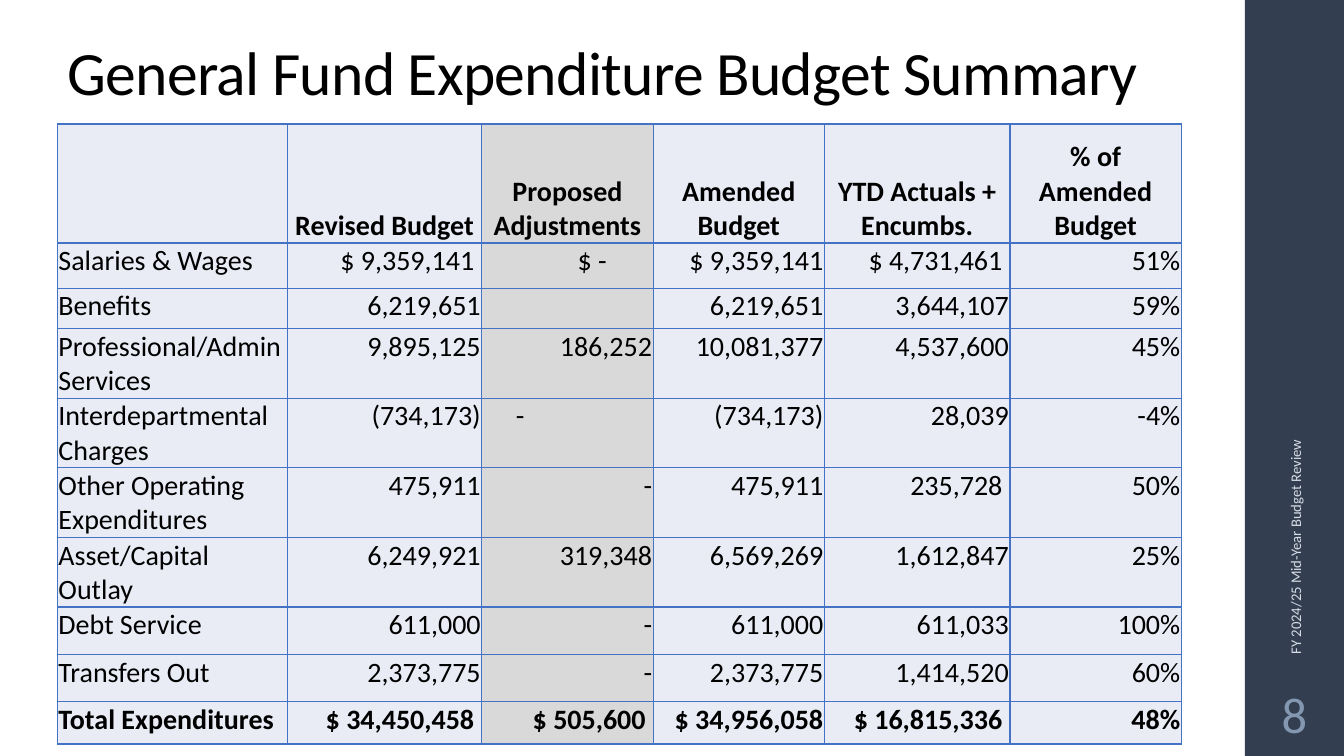
from dataclasses import dataclass

import lxml.etree
import pptx
import pptx.dml.color
import pptx.enum.shapes
import pptx.enum.text
import pptx.oxml.ns
import pptx.util

COLORS = {
    "sidebar": "333F50",
    "footer": "D6DCE5",
    "page": "8497B0",
    "ink": "000000",
    "cell": "E9EBF5",
    "adjustment": "D9D9D9",
    "border": "4472C4",
}
FONT = "Calibri"
ALIGN = pptx.enum.text.PP_ALIGN
ANCHOR = pptx.enum.text.MSO_ANCHOR
SLIDE_WIDTH = pptx.util.Inches(13.333)
SLIDE_HEIGHT = pptx.util.Inches(7.5)
GRID_COLUMN = SLIDE_WIDTH / 160
GRID_ROW = SLIDE_HEIGHT / 90
ADJUSTMENT_COLUMN = 2
BORDER_WIDTH = pptx.util.Pt(1)
CELL_INSET = pptx.util.Inches(0.01)


def across(columns: float) -> int:
    return round(columns * GRID_COLUMN)


def down(rows: float) -> int:
    return round(rows * GRID_ROW)


@dataclass(frozen=True)
class Area:
    left: float
    top: float
    width: float
    height: float

    def box(self) -> tuple[int, int, int, int]:
        return across(self.left), down(self.top), across(self.width), down(self.height)


@dataclass(frozen=True)
class Label:
    text: str
    area: Area
    size: float
    color: str
    anchor: ANCHOR = ANCHOR.MIDDLE
    align: ALIGN = ALIGN.LEFT
    rotation: float = 0
    inset: float = 0.1
    line_spacing: float = 1.0
    tracking: int = 0


@dataclass(frozen=True)
class BudgetLine:
    height: float
    values: tuple[str, ...]
    adjustment_indent: float = 0
    bold: bool = False
    header: bool = False


SIDEBAR = Area(148.2, 0, 11.8, 90)
SUMMARY = Area(6.84, 14.76, 133.8, 71.64)
COLUMN_WIDTHS = (27.36, 23.16, 20.4, 20.4, 22.08, 20.4)

LABELS = (
    Label("General Fund Expenditure Budget Summary", Area(6.84, 2.04, 133.68, 11.52),
          44, "ink", anchor=ANCHOR.BOTTOM, line_spacing=0.9, tracking=-50),
    Label("FY 2024/25 Mid-Year Budget Review", Area(130.68, 53.16, 47.04, 4.8),
          10.5, "footer", rotation=270),
    Label("8", Area(148.2, 81, 11.8, 7.8), 36, "page", align=ALIGN.CENTER, inset=0.05),
)

BUDGET_LINES = (
    BudgetLine(14.16, ("", "Revised Budget", "Proposed Adjustments", "Amended Budget",
                       "YTD Actuals + Encumbs.", "% of Amended Budget"), bold=True, header=True),
    BudgetLine(5.4, ("Salaries & Wages", "$ 9,359,141 ", "$ -", "$ 9,359,141",
                     "$ 4,731,461 ", "51%"), adjustment_indent=5.4),
    BudgetLine(4.8, ("Benefits", "6,219,651", "", "6,219,651", "3,644,107", "59%")),
    BudgetLine(7.8, ("Professional/Admin Services", "9,895,125", "186,252", "10,081,377",
                     "4,537,600", "45%")),
    BudgetLine(7.8, ("Interdepartmental Charges", "(734,173)", "-", "(734,173)",
                     "28,039", "-4%"), adjustment_indent=15.2),
    BudgetLine(7.8, ("Other Operating Expenditures", "475,911", "-", "475,911",
                     "235,728 ", "50%")),
    BudgetLine(7.56, ("Asset/Capital Outlay", "6,249,921", "319,348", "6,569,269",
                      "1,612,847", "25%")),
    BudgetLine(5.64, ("Debt Service", "611,000", "-", "611,000", "611,033", "100%")),
    BudgetLine(5.64, ("Transfers Out", "2,373,775", "-", "2,373,775", "1,414,520", "60%")),
    BudgetLine(5.04, ("Total Expenditures", "$ 34,450,458 ", "$ 505,600 ", "$ 34,956,058",
                      "$ 16,815,336 ", "48%"), bold=True),
)


def rgb(name: str) -> pptx.dml.color.RGBColor:
    return pptx.dml.color.RGBColor.from_string(COLORS[name])


def add_text(paragraph, text: str, size: float, color: str, bold: bool = False):
    run = paragraph.add_run()
    run.text = text
    run.font.name = FONT
    run.font.size = pptx.util.Pt(size)
    run.font.bold = bold
    run.font.color.rgb = rgb(color)
    return run


def draw_sidebar(slide) -> None:
    sidebar = slide.shapes.add_shape(
        pptx.enum.shapes.MSO_SHAPE.RECTANGLE, *SIDEBAR.box())
    sidebar.shadow.inherit = False
    sidebar.fill.solid()
    sidebar.fill.fore_color.rgb = rgb("sidebar")
    sidebar.line.fill.background()


def draw_label(slide, label: Label) -> None:
    box = slide.shapes.add_textbox(*label.area.box())
    box.rotation = label.rotation
    frame = box.text_frame
    frame.word_wrap = True
    frame.vertical_anchor = label.anchor
    frame.margin_left = frame.margin_right = pptx.util.Inches(label.inset)
    frame.margin_top = frame.margin_bottom = pptx.util.Inches(0.05)
    paragraph = frame.paragraphs[0]
    paragraph.alignment = label.align
    paragraph.line_spacing = label.line_spacing
    run = add_text(paragraph, label.text, label.size, label.color)
    if label.tracking:
        run.font._element.set("spc", str(label.tracking))


def add_borders(cell) -> None:
    qn = pptx.oxml.ns.qn
    properties = cell._tc.get_or_add_tcPr()
    for position, side in enumerate(("lnL", "lnR", "lnT", "lnB")):
        line = lxml.etree.Element(qn(f"a:{side}"), w=str(BORDER_WIDTH))
        fill = lxml.etree.SubElement(line, qn("a:solidFill"))
        lxml.etree.SubElement(fill, qn("a:srgbClr"), val=COLORS["border"])
        properties.insert(position, line)


def fill_cell(cell, budget_line: BudgetLine, column: int) -> None:
    adjustment = column == ADJUSTMENT_COLUMN
    cell.margin_left = cell.margin_top = CELL_INSET
    cell.margin_bottom = 0
    indent = budget_line.adjustment_indent if adjustment else 0
    cell.margin_right = CELL_INSET + across(indent)
    cell.vertical_anchor = ANCHOR.BOTTOM if budget_line.header else ANCHOR.TOP
    cell.fill.solid()
    cell.fill.fore_color.rgb = rgb("adjustment" if adjustment else "cell")
    add_borders(cell)
    if text := budget_line.values[column]:
        paragraph = cell.text_frame.paragraphs[0]
        body_align = ALIGN.RIGHT if column else ALIGN.LEFT
        paragraph.alignment = ALIGN.CENTER if budget_line.header else body_align
        add_text(paragraph, text, 20, "ink", budget_line.bold)


def draw_summary(slide) -> None:
    summary = slide.shapes.add_table(
        len(BUDGET_LINES), len(COLUMN_WIDTHS), *SUMMARY.box()).table
    summary.horz_banding = False
    for column, width in enumerate(COLUMN_WIDTHS):
        summary.columns[column].width = across(width)
    for row, budget_line in enumerate(BUDGET_LINES):
        summary.rows[row].height = down(budget_line.height)
        for column in range(len(COLUMN_WIDTHS)):
            fill_cell(summary.cell(row, column), budget_line, column)


def main() -> None:
    deck = pptx.Presentation()
    deck.slide_width = SLIDE_WIDTH
    deck.slide_height = SLIDE_HEIGHT
    slide = deck.slides.add_slide(deck.slide_layouts[6])
    draw_sidebar(slide)
    draw_summary(slide)
    for label in LABELS:
        draw_label(slide, label)
    deck.save("out.pptx")


if __name__ == "__main__":
    main()
